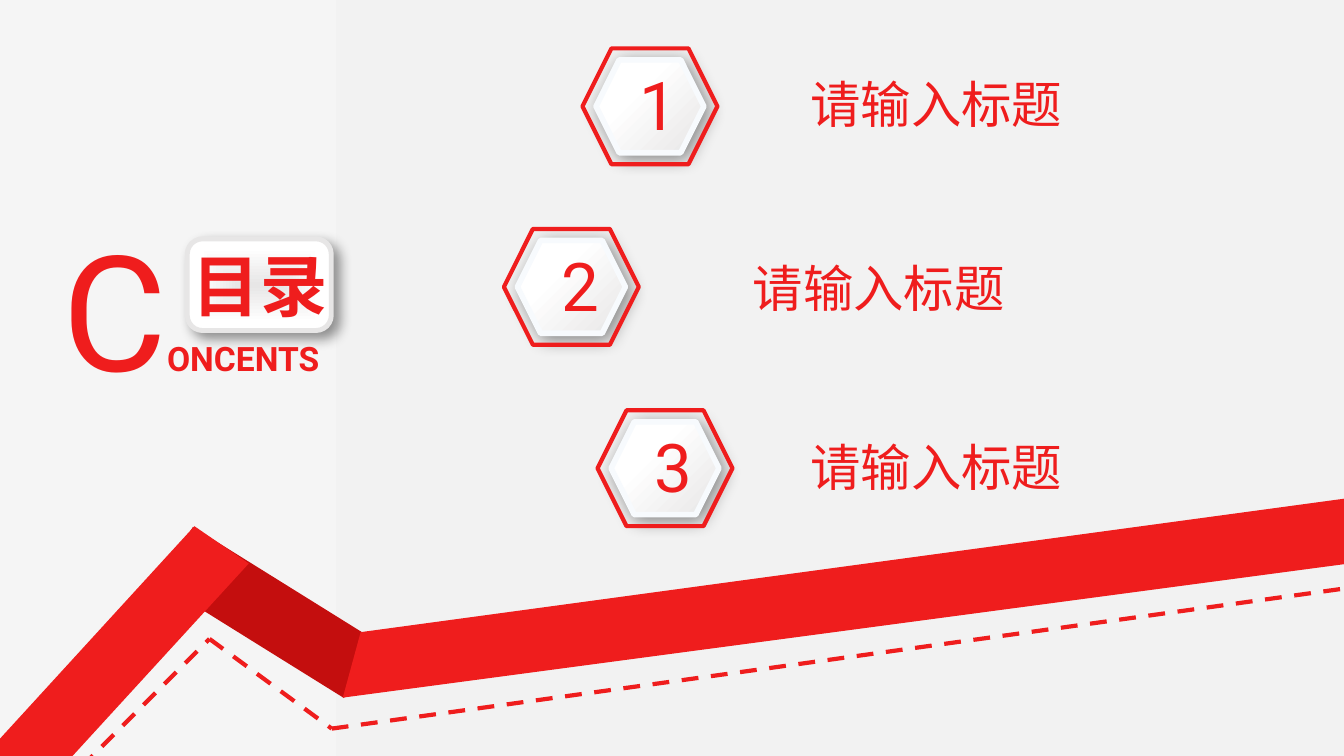
"""Build a contents slide with three numbered hexagon badges and a folded ribbon."""
from itertools import pairwise

from lxml.etree import SubElement
from pptx import Presentation
from pptx.dml.color import RGBColor
from pptx.enum.dml import MSO_LINE
from pptx.enum.shapes import MSO_CONNECTOR, MSO_SHAPE
from pptx.enum.text import MSO_ANCHOR, MSO_AUTO_SIZE, PP_ALIGN
from pptx.oxml.ns import qn
from pptx.util import Cm, Pt

RED = RGBColor(0xEF, 0x1D, 0x1D)
DARK_RED = RGBColor(0xC4, 0x0E, 0x0E)
WHITE = RGBColor(0xFF, 0xFF, 0xFF)
GREY = RGBColor(0xE7, 0xE6, 0xE6)
BADGE_EDGE = RGBColor(0xF7, 0xFA, 0xFD)
PAGE_LEFT = RGBColor(0xF5, 0xF5, 0xF5)
PAGE = RGBColor(0xF2, 0xF2, 0xF2)
CHINESE = "Noto Sans CJK SC"
LATIN = "Roboto"

RIBBON_BANDS = [
    [(-1.35, 20.09), (4.9, 13.26), (6.27, 14.2), (-0.15, 21.21)],
    [(9.09, 15.93), (38.35, 11.96), (38.58, 13.59), (8.64, 17.58)],
]
DASHED_ROUTE = [(1.52, 19.86), (5.28, 16.1), (8.36, 18.36), (34.24, 14.78)]
ENTRIES = [
    ("1", (14.68, 1.22), (20.17, 1.73)),
    ("2", (12.7, 5.77), (18.72, 6.35)),
    ("3", (15.06, 10.34), (20.17, 10.87)),
]


def set_gradient(fill, stops, angle):
    fill.gradient()
    fill.gradient_angle = angle
    for stop, (position, color) in zip(fill.gradient_stops, stops):
        stop.position = position
        stop.color.rgb = color


def set_rectangular_gradient(shape):
    gradient = shape._element.spPr.find(qn("a:gradFill"))
    gradient.remove(gradient.find(qn("a:lin")))
    center = SubElement(gradient, qn("a:path"), path="rect")
    edges = {edge: "50000" for edge in "ltrb"}
    SubElement(center, qn("a:fillToRect"), **edges)


def add_shadow(shape, blur, distance, opacity):
    effects = shape._element.spPr.find(qn("a:effectLst"))
    shadow = SubElement(
        effects, qn("a:outerShdw"), blurRad=str(Pt(blur)), dist=str(Pt(distance)),
        dir="2700000", algn="tl", rotWithShape="0")
    color = SubElement(shadow, qn("a:srgbClr"), val="000000")
    SubElement(color, qn("a:alpha"), val=str(opacity * 1000))


def add_preset(shapes, preset, left, top, width, height):
    shape = shapes.add_shape(preset, Cm(left), Cm(top), Cm(width), Cm(height))
    shape.shadow.inherit = False
    return shape


def set_line(shape, color, width):
    shape.line.color.rgb = color
    shape.line.width = Pt(width)


def fill_plain(shape, color):
    shape.fill.solid()
    shape.fill.fore_color.rgb = color
    shape.line.fill.background()


def add_run(paragraph, text, size, typeface, bold=False):
    run = paragraph.add_run()
    run.text = text
    run.font.size = Pt(size)
    run.font.name = typeface
    run.font.bold = bold
    run.font.color.rgb = RED
    SubElement(run._r.get_or_add_rPr(), qn("a:ea"), typeface=typeface)


def format_frame(shape, alignment):
    frame = shape.text_frame
    frame.word_wrap = True
    frame.auto_size = MSO_AUTO_SIZE.NONE
    frame.vertical_anchor = MSO_ANCHOR.TOP
    paragraph = frame.paragraphs[0]
    paragraph.alignment = alignment
    return paragraph


def add_text(slide, left, top, width, height, alignment=PP_ALIGN.LEFT):
    box = slide.shapes.add_textbox(Cm(left), Cm(top), Cm(width), Cm(height))
    return format_frame(box, alignment)


def add_band(slide, points):
    start, *rest = [(Cm(x), Cm(y)) for x, y in points]
    builder = slide.shapes.build_freeform(*start)
    builder.add_line_segments(rest, close=True)
    band = builder.convert_to_shape()
    band.shadow.inherit = False
    fill_plain(band, RED)


def add_ribbon(slide):
    fold = add_preset(slide.shapes, MSO_SHAPE.RECTANGLE, 4.01, 14.61, 5.51, 1.65)
    fold.rotation = 31.9
    fill_plain(fold, DARK_RED)
    for points in RIBBON_BANDS:
        add_band(slide, points)


def add_dashed_line(slide, start, end):
    line = slide.shapes.add_connector(
        MSO_CONNECTOR.STRAIGHT, *[Cm(value) for value in (*start, *end)])
    set_line(line, RED, 3)
    line.line.dash_style = MSO_LINE.DASH
    SubElement(line._element.spPr, qn("a:effectLst"))


def add_heading(slide):
    plate = add_preset(slide.shapes, MSO_SHAPE.ROUNDED_RECTANGLE, 4.72, 6.02, 3.63, 2.31)
    set_gradient(plate.fill, [(0, GREY), (0.81, WHITE)], 0)
    set_rectangular_gradient(plate)
    set_line(plate, GREY, 3.5)
    add_shadow(plate, 9, 6, 42)

    title = slide.shapes.title
    title.left, title.top = Cm(3.56), Cm(6.02)
    title.width, title.height = Cm(5.99), Cm(2.31)
    paragraph = format_frame(title, PP_ALIGN.CENTER)
    paragraph.line_spacing = 1.0
    paragraph.space_before = Pt(0)
    add_run(paragraph, "目录", 48, CHINESE, bold=True)
    plate._element.addnext(title._element)

    paragraph = add_text(slide, 1.32, 5.18, 9.14, 5.18)
    add_run(paragraph, "C", 115, LATIN)
    add_run(paragraph, "ONCENTS", 24, LATIN, bold=True)


def add_badge(slide, left, top):
    shapes = slide.shapes.add_group_shape().shapes
    plate = add_preset(shapes, MSO_SHAPE.HEXAGON, left + 0.34, top + 0.29, 2.72, 2.34)
    set_gradient(plate.fill, [(0.34, WHITE), (1, GREY)], 315)
    set_line(plate, BADGE_EDGE, 4)
    add_shadow(plate, 13, 4, 43)
    frame = add_preset(shapes, MSO_SHAPE.HEXAGON, left, top, 3.4, 2.92)
    frame.fill.background()
    set_line(frame, RED, 3)


def add_entry(slide, number, badge_place, text_place):
    left, top = badge_place
    add_badge(slide, left, top)
    paragraph = add_text(slide, left + 1.19, top + 0.25, 1.02, 2.31, PP_ALIGN.CENTER)
    add_run(paragraph, number, 48, LATIN)
    paragraph = add_text(slide, *text_place, 9.58, 1.8)
    add_run(paragraph, "请输入标题", 36, CHINESE)


def main():
    presentation = Presentation()
    presentation.slide_width, presentation.slide_height = Cm(33.87), Cm(19.05)
    slide = presentation.slides.add_slide(presentation.slide_layouts[5])
    set_gradient(slide.background.fill, [(0, PAGE_LEFT), (0.5, PAGE)], 0)
    add_ribbon(slide)
    add_heading(slide)
    for entry in ENTRIES:
        add_entry(slide, *entry)
    for start, end in pairwise(DASHED_ROUTE):
        add_dashed_line(slide, start, end)
    presentation.save("out.pptx")


if __name__ == "__main__":
    main()
